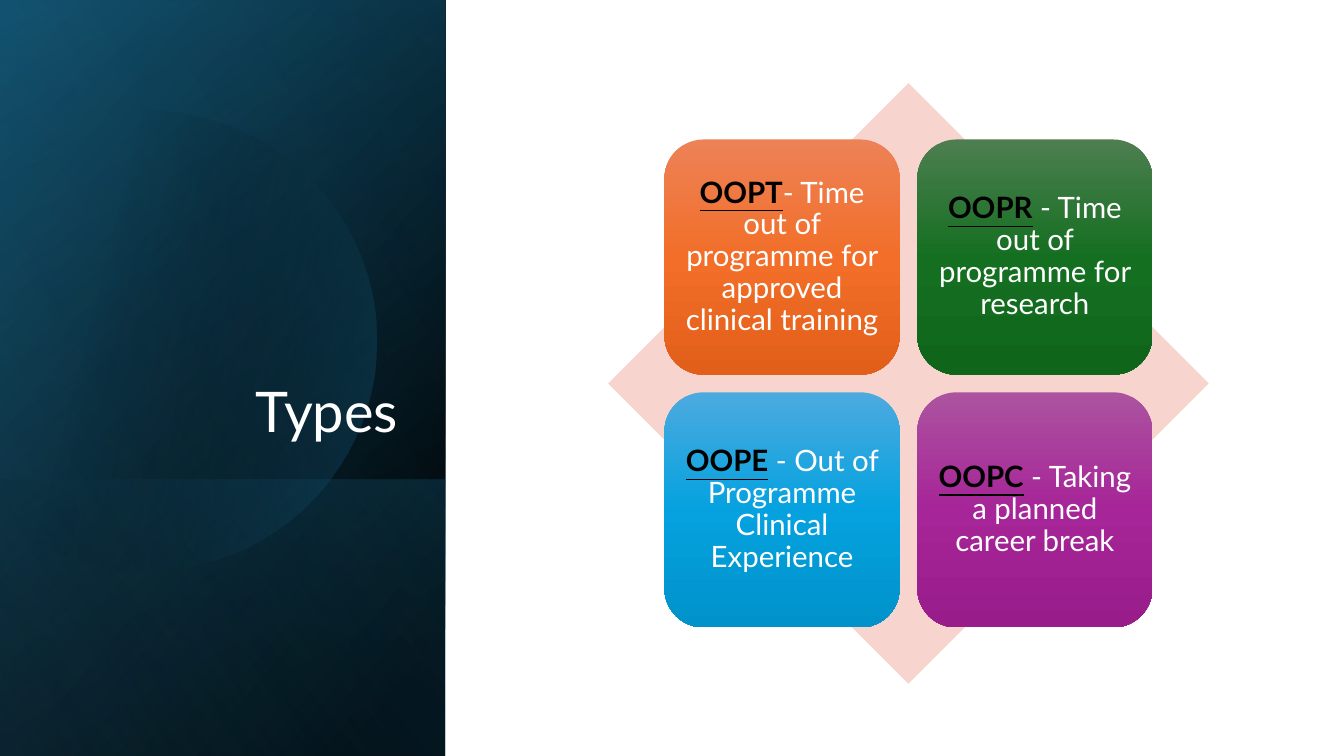
from math import acos, cos, radians, sin

from lxml.etree import SubElement
from pptx import Presentation
from pptx.dml.color import RGBColor
from pptx.enum.shapes import MSO_SHAPE
from pptx.enum.text import MSO_ANCHOR, MSO_AUTO_SIZE, PP_ALIGN
from pptx.oxml.ns import qn
from pptx.util import Emu, Inches, Pt

COLUMNS, ROWS = 160, 90
PANEL_WIDTH = 53
MATRIX_CENTRE = (108.15, 45.65)
DIAMOND_SIZE, CARD_SIZE, CARD_STEP = 71.5, 28, 30.1

# Each stop is (position, colour, opacity), in percent.
PANEL_LAYERS = [
    (0, 50, [(8, "000000", 100), (100, "104862", 100)]),
    (0, 30, [(0, "000000", 0), (99, "156082", 46)]),
    (57.1, 130, [(2, "156082", 29), (100, "000000", 30)]),
]
DISC_STOPS = [(29, "000000", 0), (100, "156082", 43)]
PANEL_GLOW = (0, 120, [(0, "000000", 0), (99, "46B1E1", 11)])

CARDS = [
    ("OOPT", "- Time out of programme for approved clinical training",
     ("ED8257", "F26E29", "E25F1A")),
    ("OOPR", " - Time out of programme for research",
     ("4D7E50", "156F21", "0F661B")),
    ("OOPE", " - Out of Programme Clinical Experience",
     ("4CAADF", "05A2DF", "0092CB")),
    ("OOPC", " - Taking a planned career break",
     ("AC53A0", "A62598", "991C8B")),
]


def colour(hex_string):
    return RGBColor.from_string(hex_string)


class SlideBuilder:
    font_name = "Lato"
    title_size = Pt(40)
    card_text_size = Pt(21)
    light, dark = "FFFFFF", "000000"

    def __init__(self, presentation):
        self.slide = presentation.slides.add_slide(presentation.slide_layouts[5])
        self.column = presentation.slide_width / COLUMNS
        self.row = presentation.slide_height / ROWS

    def frame(self, left, top, width, height):
        """Turn grid columns and rows into slide lengths."""
        return (Emu(round(left * self.column)), Emu(round(top * self.row)),
                Emu(round(width * self.column)), Emu(round(height * self.row)))

    def add_shape(self, kind, *grid_box):
        shape = self.slide.shapes.add_shape(kind, *self.frame(*grid_box))
        return self.clean(shape)

    def clean(self, shape):
        shape.shadow.inherit = False
        shape.line.fill.background()
        return shape

    def shade(self, shape, angle, stops):
        """Fill with a linear gradient; the angle runs clockwise in degrees."""
        shape.fill.gradient()
        gradient = shape.element.spPr.find(qn("a:gradFill"))
        gradient.find(qn("a:lin")).set("ang", str(angle * 60000))
        stop_list = gradient.find(qn("a:gsLst"))
        for old_stop in list(stop_list):
            stop_list.remove(old_stop)
        for position, hex_string, opacity in stops:
            stop = SubElement(stop_list, qn("a:gs"), pos=str(position * 1000))
            stop_colour = SubElement(stop, qn("a:srgbClr"), val=hex_string)
            if opacity < 100:
                SubElement(stop_colour, qn("a:alpha"), val=str(opacity * 1000))

    def add_panel_layer(self, top, angle, stops):
        """Add a quarter-turned, mirrored layer from a row down to the bottom."""
        length = ROWS - top
        left = (PANEL_WIDTH - length) / 2
        layer_top = top + (length - PANEL_WIDTH) / 2
        layer = self.add_shape(MSO_SHAPE.RECTANGLE, left, layer_top,
                               length, PANEL_WIDTH)
        layer.rotation = 90
        layer.element.spPr.find(qn("a:xfrm")).set("flipH", "1")
        self.shade(layer, angle, stops)

    def add_disc(self, centre_x, centre_y, radius, angle, stops):
        """Add a disc cut off at the slide's left edge."""
        limit = acos(-centre_x / radius)
        steps = 120
        turns = [limit * (2 * step / steps - 1) for step in range(steps + 1)]
        points = [((centre_x + radius * cos(turn)) * self.column,
                   (centre_y + radius * sin(turn)) * self.row) for turn in turns]
        builder = self.slide.shapes.build_freeform(*points[0])
        builder.add_line_segments(points[1:], close=True)
        self.shade(self.clean(builder.convert_to_shape()), angle, stops)

    def add_run(self, paragraph, text, size, hex_string, marked=False):
        run = paragraph.add_run()
        run.text = text
        run.font.name = self.font_name
        run.font.size = size
        run.font.color.rgb = colour(hex_string)
        run.font.bold = run.font.underline = marked

    def add_title(self, text, *grid_box):
        title = self.slide.shapes.title
        title.left, title.top, title.width, title.height = self.frame(*grid_box)
        title.element.getparent().append(title.element)  # bring to the front
        title.text_frame.auto_size = MSO_AUTO_SIZE.NONE
        title.text_frame.vertical_anchor = MSO_ANCHOR.BOTTOM
        paragraph = title.text_frame.paragraphs[0]
        paragraph.alignment = PP_ALIGN.RIGHT
        paragraph.line_spacing = 0.9
        self.add_run(paragraph, text, self.title_size, self.light)

    def add_diamond(self, centre_x, centre_y, size, hex_string):
        diamond = self.add_shape(MSO_SHAPE.DIAMOND, centre_x - size / 2,
                                 centre_y - size / 2, size, size)
        diamond.fill.solid()
        diamond.fill.fore_color.rgb = colour(hex_string)

    def add_card(self, left, top, term, meaning, shades):
        card = self.add_shape(MSO_SHAPE.ROUNDED_RECTANGLE, left, top,
                              CARD_SIZE, CARD_SIZE)
        self.shade(card, 90, [(50 * index, shade, 100)
                              for index, shade in enumerate(shades)])
        frame = card.text_frame
        frame.word_wrap = True
        frame.vertical_anchor = MSO_ANCHOR.MIDDLE
        frame.margin_left = frame.margin_right = Inches(0.09)
        frame.margin_top = frame.margin_bottom = Inches(0.09)
        paragraph = frame.paragraphs[0]
        paragraph.alignment = PP_ALIGN.CENTER
        paragraph.line_spacing = 0.9
        self.add_run(paragraph, term, self.card_text_size, self.dark, marked=True)
        self.add_run(paragraph, meaning, self.card_text_size, self.light)


def main():
    presentation = Presentation()
    presentation.slide_width = Inches(13.33)
    presentation.slide_height = Inches(7.5)
    builder = SlideBuilder(presentation)

    for layer in PANEL_LAYERS:
        builder.add_panel_layer(*layer)
    builder.add_disc(17.4, 40.5, 27.4, 14, DISC_STOPS)
    builder.add_panel_layer(*PANEL_GLOW)
    builder.add_title("Types", 7.7, 22.1, 40.9, 31.4)

    builder.add_diamond(*MATRIX_CENTRE, DIAMOND_SIZE, "F7D5CE")
    first_left, first_top = (centre - (CARD_STEP + CARD_SIZE) / 2
                             for centre in MATRIX_CENTRE)
    for index, card in enumerate(CARDS):
        row, column = divmod(index, 2)
        builder.add_card(first_left + column * CARD_STEP,
                         first_top + row * CARD_STEP, *card)

    presentation.save("out.pptx")


if __name__ == "__main__":
    main()
